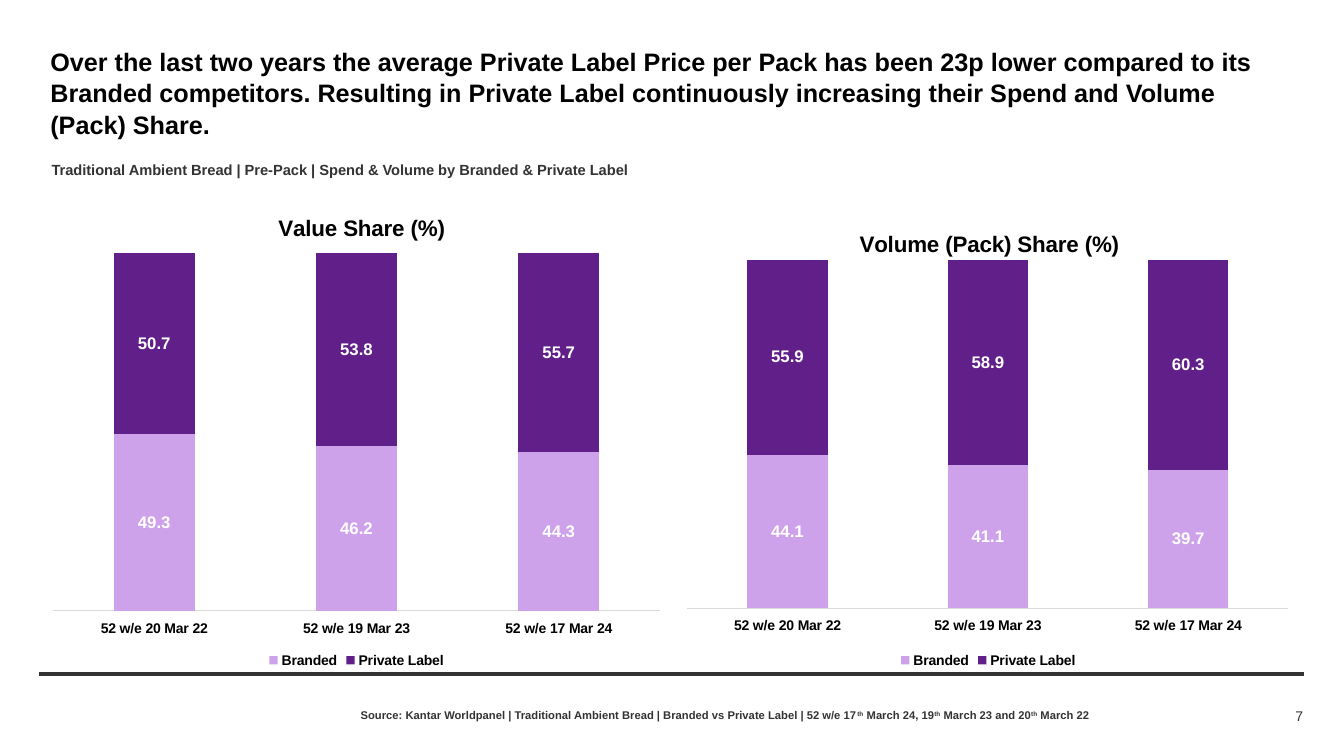
from dataclasses import dataclass

from lxml.etree import SubElement
from pptx import Presentation
from pptx.chart.data import CategoryChartData
from pptx.dml.color import RGBColor
from pptx.enum.chart import (XL_CHART_TYPE, XL_LABEL_POSITION,
                             XL_LEGEND_POSITION, XL_TICK_LABEL_POSITION,
                             XL_TICK_MARK)
from pptx.enum.shapes import MSO_CONNECTOR
from pptx.enum.text import MSO_ANCHOR, PP_ALIGN
from pptx.oxml import parse_xml
from pptx.oxml.ns import nsdecls, qn
from pptx.util import Cm, Pt

BLACK = RGBColor(0x00, 0x00, 0x00)
WHITE = RGBColor(0xFF, 0xFF, 0xFF)
CHARCOAL = RGBColor(0x33, 0x33, 0x33)
AXIS_GREY = RGBColor(0xD9, 0xD9, 0xD9)
LILAC = RGBColor(0xCE, 0xA2, 0xEA)
PURPLE = RGBColor(0x60, 0x1F, 0x89)
FONT = "Arial"
YEARS = ("52 w/e 20 Mar 22", "52 w/e 19 Mar 23", "52 w/e 17 Mar 24")


@dataclass(frozen=True)
class Box:
    left: float
    top: float
    width: float
    height: float

    def lengths(self) -> tuple:
        return Cm(self.left), Cm(self.top), Cm(self.width), Cm(self.height)


@dataclass(frozen=True)
class Caption:
    box: Box
    runs: tuple[str, ...]
    size: float
    color: RGBColor = CHARCOAL
    bold: bool = True
    align: PP_ALIGN = PP_ALIGN.LEFT
    anchor: MSO_ANCHOR = MSO_ANCHOR.MIDDLE
    inset: tuple[float, float] = (0, 0)
    line_spacing: float = 1.0


@dataclass(frozen=True)
class ShareChart:
    title: str
    box: Box
    branded: tuple[float, ...]
    private_label: tuple[float, ...]
    title_at: tuple[float, float]
    plot: Box


CAPTIONS = (
    Caption(Box(1.3, 3.99, 20.83, 0.56),
            ("Traditional Ambient Bread | Pre-Pack | Spend & Volume by "
             "Branded & Private Label",), 10.5),
    Caption(Box(1.02, 0.99, 31.85, 2.49),
            ("Over the last two years the average Private Label Price per Pack "
             "has been 23p lower compared to its Branded competitors. Resulting "
             "in Private Label continuously increasing their Spend and Volume "
             "(Pack) Share.",),
            18, BLACK, anchor=MSO_ANCHOR.TOP, inset=(0.25, 0.13),
            line_spacing=1.05),
    Caption(Box(9.09, 17.75, 20.83, 0.56),
            ("Source: Kantar Worldpanel | Traditional Ambient Bread | Branded "
             "vs Private Label | 52 w/e 17", "th", " March 24, 19", "th",
             " March 23 and 20", "th", " March 22"), 8),
    Caption(Box(30.15, 17.75, 2.69, 0.56), ("7",), 10, bold=False,
            align=PP_ALIGN.RIGHT),
)

SHARE_CHARTS = (
    ShareChart("Volume (Pack) Share (%)", Box(16.94, 5.23, 15.93, 11.71),
               (44.1, 41.1, 39.7), (55.9, 58.9, 60.3),
               (0.29, 0.04), Box(0.024, 0.112, 0.951, 0.751)),
    ShareChart("Value Share (%)", Box(1.02, 4.8, 15.93, 12.14),
               (49.3, 46.2, 44.3), (50.7, 53.8, 55.7),
               (0.37, 0.04), Box(0.02, 0.13, 0.96, 0.743)),
)


def style_font(font, size: float, color: RGBColor, bold: bool = True) -> None:
    font.name = FONT
    font.size = Pt(size)
    font.bold = bold
    font.color.rgb = color


def add_caption(slide, caption: Caption) -> None:
    frame = slide.shapes.add_textbox(*caption.box.lengths()).text_frame
    frame.word_wrap = True
    frame.vertical_anchor = caption.anchor
    side, edge = caption.inset
    frame.margin_left = frame.margin_right = Cm(side)
    frame.margin_top = frame.margin_bottom = Cm(edge)
    paragraph = frame.paragraphs[0]
    paragraph.alignment = caption.align
    paragraph.line_spacing = caption.line_spacing
    for text in caption.runs:
        run = paragraph.add_run()
        run.text = text
        style_font(run.font, caption.size, caption.color, caption.bold)
        if text == "th":
            run.font._element.set("baseline", "30000")


def manual_layout(settings: dict[str, str | float]):
    layout = parse_xml(f"<c:layout {nsdecls('c')}><c:manualLayout/></c:layout>")
    for tag, value in settings.items():
        SubElement(layout[0], qn(f"c:{tag}")).set("val", str(value))
    return layout


def place_parts(chart, share: ShareChart) -> None:
    x, y = share.title_at
    title = chart.chart_title._element
    for old in title.findall(qn("c:layout")):
        title.remove(old)
    title.find(qn("c:tx")).addnext(manual_layout(
        {"xMode": "edge", "yMode": "edge", "x": x, "y": y}))
    plot_area = chart._chartSpace.chart.plotArea
    for old in plot_area.findall(qn("c:layout")):
        plot_area.remove(old)
    plot = share.plot
    plot_area.insert(0, manual_layout(
        {"layoutTarget": "inner", "xMode": "edge", "yMode": "edge",
         "x": plot.left, "y": plot.top, "w": plot.width, "h": plot.height}))


def add_share_chart(slide, share: ShareChart) -> None:
    shares = CategoryChartData(number_format="0.0")
    shares.categories = YEARS
    shares.add_series("Branded", share.branded)
    shares.add_series("Private Label", share.private_label)
    chart = slide.shapes.add_chart(XL_CHART_TYPE.COLUMN_STACKED_100,
                                   *share.box.lengths(), shares).chart
    style_font(chart.font, 10, BLACK, False)

    chart.has_title = True
    heading = chart.chart_title.text_frame.paragraphs[0].add_run()
    heading.text = share.title
    style_font(heading.font, 16, BLACK)
    chart.chart_title.include_in_layout = False

    chart.has_legend = True
    chart.legend.position = XL_LEGEND_POSITION.BOTTOM
    chart.legend.include_in_layout = False
    style_font(chart.legend.font, 10, BLACK)

    years = chart.category_axis
    years.major_tick_mark = years.minor_tick_mark = XL_TICK_MARK.NONE
    years.tick_label_position = XL_TICK_LABEL_POSITION.LOW
    years.format.line.color.rgb = AXIS_GREY
    years.format.line.width = Pt(0.75)
    style_font(years.tick_labels.font, 10, BLACK)
    chart.value_axis.has_major_gridlines = False
    chart.value_axis.visible = False

    columns = chart.plots[0]
    columns.vary_by_categories = False
    columns.gap_width = 150
    columns.overlap = 100
    for series, color in zip(columns.series, (LILAC, PURPLE)):
        series.format.fill.solid()
        series.format.fill.fore_color.rgb = color
        labels = series.data_labels
        labels.show_value = True
        labels.position = XL_LABEL_POSITION.CENTER
        style_font(labels.font, 12, WHITE)
    place_parts(chart, share)


def add_footer_rule(slide) -> None:
    rule = slide.shapes.add_connector(MSO_CONNECTOR.STRAIGHT, Cm(0.99), Cm(16.99),
                                      Cm(32.87), Cm(16.99))
    rule.line.color.rgb = CHARCOAL
    rule.line.width = Pt(3)
    SubElement(rule._element.spPr, qn("a:effectLst"))


def main() -> None:
    deck = Presentation()
    deck.slide_width, deck.slide_height = Cm(33.87), Cm(19.05)
    slide = deck.slides.add_slide(deck.slide_layouts[6])
    add_footer_rule(slide)
    for caption in CAPTIONS:
        add_caption(slide, caption)
    for share in SHARE_CHARTS:
        add_share_chart(slide, share)
    deck.save("out.pptx")


if __name__ == "__main__":
    main()
